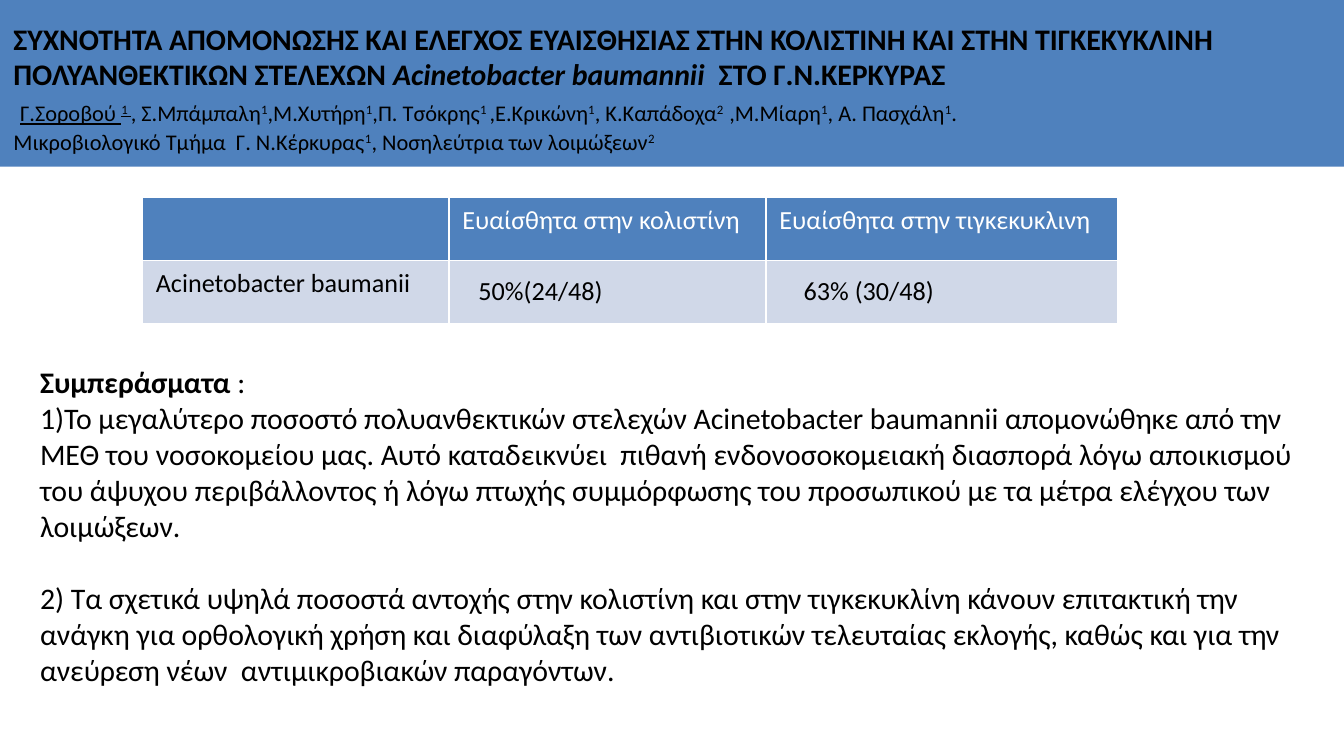
from dataclasses import dataclass

from lxml import etree
from pptx import Presentation
from pptx.dml.color import RGBColor
from pptx.enum.text import MSO_ANCHOR, MSO_AUTO_SIZE, PP_ALIGN
from pptx.oxml.ns import qn
from pptx.util import Inches, Pt

LEFT = PP_ALIGN.LEFT
TOP = MSO_ANCHOR.TOP
NO_FIT = MSO_AUTO_SIZE.NONE
TITLE_ONLY = 5
FONT = "Calibri"
COLORS = {"blue": "4F81BD", "pale": "D0D8E8", "black": "000000", "white": "FFFFFF"}


@dataclass
class Piece:
    text: str
    size: float = 12
    bold: bool = False
    italic: bool = False
    underline: bool = False
    raised: bool = False


@dataclass
class Cell:
    text: str
    fill: str
    color: str
    margin_left: float = 0.1
    margin_top: float = 0.05


def rgb(name: str) -> RGBColor:
    return RGBColor.from_string(COLORS[name])


def format_run(run, size: float, color: str, bold: bool = False) -> None:
    run.font.name = FONT
    run.font.size = Pt(size)
    run.font.bold = bold
    run.font.color.rgb = rgb(color)


def write_pieces(paragraph, pieces: list[Piece]) -> None:
    paragraph.alignment = LEFT
    for piece in pieces:
        run = paragraph.add_run()
        run.text = piece.text
        format_run(run, piece.size, "black", piece.bold)
        run.font.italic = piece.italic
        run.font.underline = piece.underline
        if piece.raised:
            run._r.get_or_add_rPr().set("baseline", "30000")


def write_paragraphs(text_frame, paragraphs: list[list[Piece]]) -> None:
    for index, pieces in enumerate(paragraphs):
        paragraph = text_frame.add_paragraph() if index else text_frame.paragraphs[0]
        write_pieces(paragraph, pieces)


def add_borders(cell) -> None:
    properties = cell._tc.get_or_add_tcPr()
    for side in ("a:lnL", "a:lnR", "a:lnT", "a:lnB"):
        line = etree.SubElement(properties, qn(side), w=str(Pt(1)))
        fill = etree.SubElement(line, qn("a:solidFill"))
        etree.SubElement(fill, qn("a:srgbClr"), val=COLORS["white"])


def fill_cell(cell, content: Cell) -> None:
    add_borders(cell)
    cell.fill.solid()
    cell.fill.fore_color.rgb = rgb(content.fill)
    cell.margin_left = Inches(content.margin_left)
    cell.margin_top = Inches(content.margin_top)
    cell.text_frame.text = content.text
    for run in cell.text_frame.paragraphs[0].runs:
        format_run(run, 14, content.color)


def add_results_table(slide, rows: list[list[Cell]], widths: list[float]) -> None:
    frame = slide.shapes.add_table(
        len(rows), len(widths), Inches(1.06), Inches(1.47), Inches(sum(widths)), Inches(0.94)
    )
    table = frame.table
    for column, width in zip(table.columns, widths):
        column.width = Inches(width)
    for row_index, row in enumerate(rows):
        for column_index, content in enumerate(row):
            fill_cell(table.cell(row_index, column_index), content)


def author(name: str, mark: str) -> list[Piece]:
    return [Piece(name), Piece(mark, raised=True)]


TITLE = [
    [
        Piece(
            "ΣΥΧΝΟΤΗΤΑ ΑΠΟΜΟΝΩΣΗΣ ΚΑΙ ΕΛΕΓΧΟΣ ΕΥΑΙΣΘΗΣΙΑΣ ΣΤΗΝ ΚΟΛΙΣΤΙΝΗ ΚΑΙ ΣΤΗΝ "
            "ΤΙΓΚΕΚΥΚΛΙΝΗ ΠΟΛΥΑΝΘΕΚΤΙΚΩΝ ΣΤΕΛΕΧΩΝ ",
            16,
            bold=True,
        ),
        Piece("Acinetobacter baumannii ", 16, bold=True, italic=True),
        Piece(" ΣΤΟ Γ.Ν.ΚΕΡΚΥΡΑΣ", 16, bold=True),
    ],
    [
        Piece(" ", 16, bold=True),
        Piece("Γ.Σοροβού ", underline=True),
        Piece("1 ", underline=True, raised=True),
        *author(", Σ.Μπάμπαλη", "1"),
        *author(",Μ.Χυτήρη", "1"),
        *author(",Π. Τσόκρης", "1 "),
        *author(",Ε.Κρικώνη", "1"),
        *author(", Κ.Καπάδοχα", "2  "),
        *author(",Μ.Μίαρη", "1"),
        *author(", Α. Πασχάλη", "1"),
        Piece("."),
    ],
    [
        *author("Μικροβιολογικό Τμήμα  Γ. Ν.Κέρκυρας", "1"),
        *author(", Νοσηλεύτρια των λοιμώξεων", "2"),
    ],
]

RESULTS = [
    [
        Cell("", "blue", "white"),
        Cell("Ευαίσθητα στην κολιστίνη", "blue", "white"),
        Cell("Ευαίσθητα στην τιγκεκυκλινη", "blue", "white"),
    ],
    [
        Cell("Acinetobacter baumanii", "pale", "black"),
        Cell("50%(24/48)", "pale", "black", 0.22, 0.11),
        Cell("63% (30/48)", "pale", "black", 0.28, 0.11),
    ],
]

CONCLUSIONS = [
    [Piece("Συμπεράσματα ", 16, bold=True), Piece(":", 16)],
    [
        Piece(
            "1)To μεγαλύτερο ποσοστό πολυανθεκτικών στελεχών Αcinetobacter baumannii "
            "απομονώθηκε από την ΜΕΘ του νοσοκομείου μας. Αυτό καταδεικνύει  πιθανή "
            "ενδονοσοκομειακή διασπορά λόγω αποικισμού του άψυχου περιβάλλοντος ή λόγω "
            "πτωχής συμμόρφωσης του προσωπικού με τα μέτρα ελέγχου των λοιμώξεων.",
            16,
        )
    ],
    [
        Piece(
            "2) Τα σχετικά υψηλά ποσοστά αντοχής στην κολιστίνη και στην τιγκεκυκλίνη "
            "κάνουν επιτακτική την ανάγκη για ορθολογική χρήση και διαφύλαξη των "
            "αντιβιοτικών τελευταίας εκλογής, καθώς και για την ανεύρεση νέων  "
            "αντιμικροβιακών παραγόντων.",
            16,
        )
    ],
]


def add_title(slide) -> None:
    title = slide.shapes.title
    title.left, title.top = Inches(0), Inches(0)
    title.width, title.height = Inches(10), Inches(1.24)
    title.fill.solid()
    title.fill.fore_color.rgb = rgb("blue")
    text_frame = title.text_frame
    text_frame.auto_size = NO_FIT
    text_frame.vertical_anchor = TOP
    text_frame.margin_top = Inches(0.15)
    write_paragraphs(text_frame, TITLE)


def add_conclusions(slide) -> None:
    box = slide.shapes.add_textbox(Inches(0.2), Inches(2.66), Inches(9.53), Inches(2.79))
    box.text_frame.word_wrap = True
    write_paragraphs(box.text_frame, CONCLUSIONS)
    box.text_frame.paragraphs[-1].space_before = Pt(19.5)


def main() -> None:
    presentation = Presentation()
    presentation.slide_width = Inches(10)
    presentation.slide_height = presentation.slide_width * 9 // 16
    slide = presentation.slides.add_slide(presentation.slide_layouts[TITLE_ONLY])
    add_title(slide)
    add_results_table(slide, RESULTS, [2.28, 2.36, 2.62])
    add_conclusions(slide)
    presentation.save("out.pptx")


if __name__ == "__main__":
    main()
